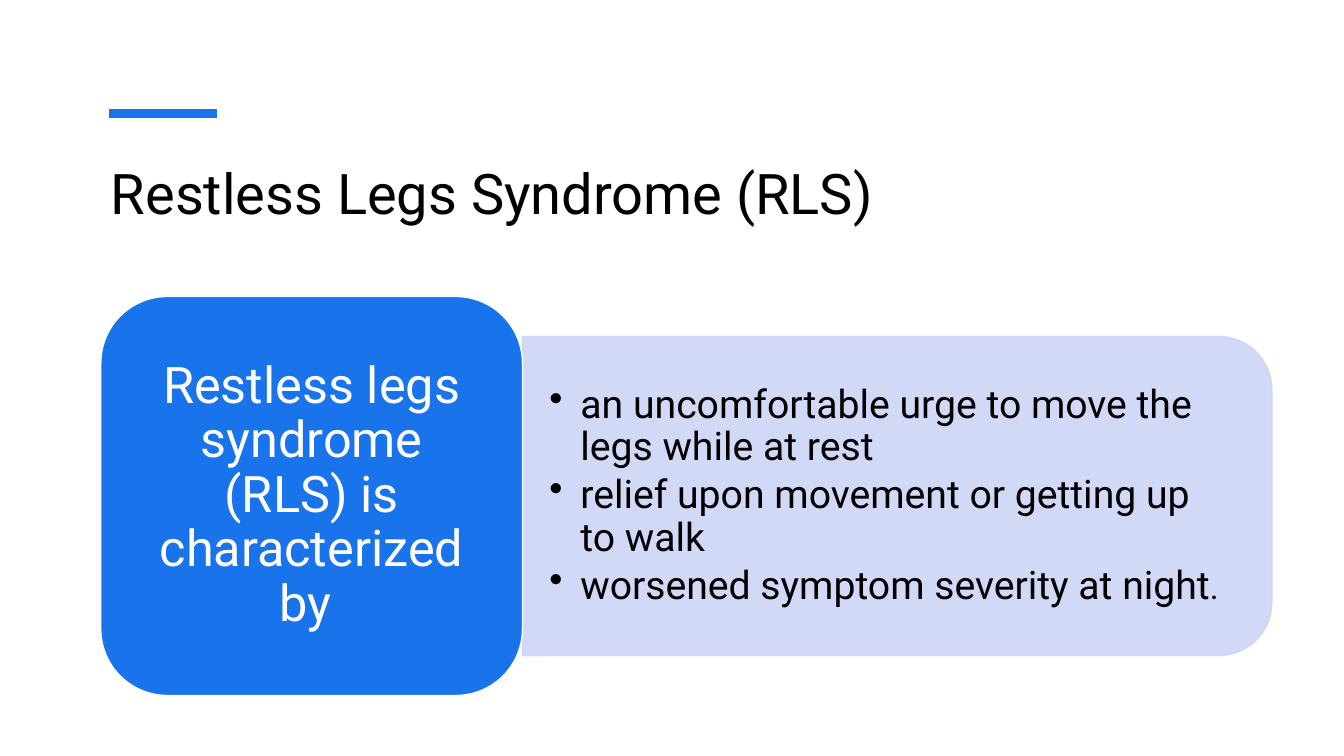
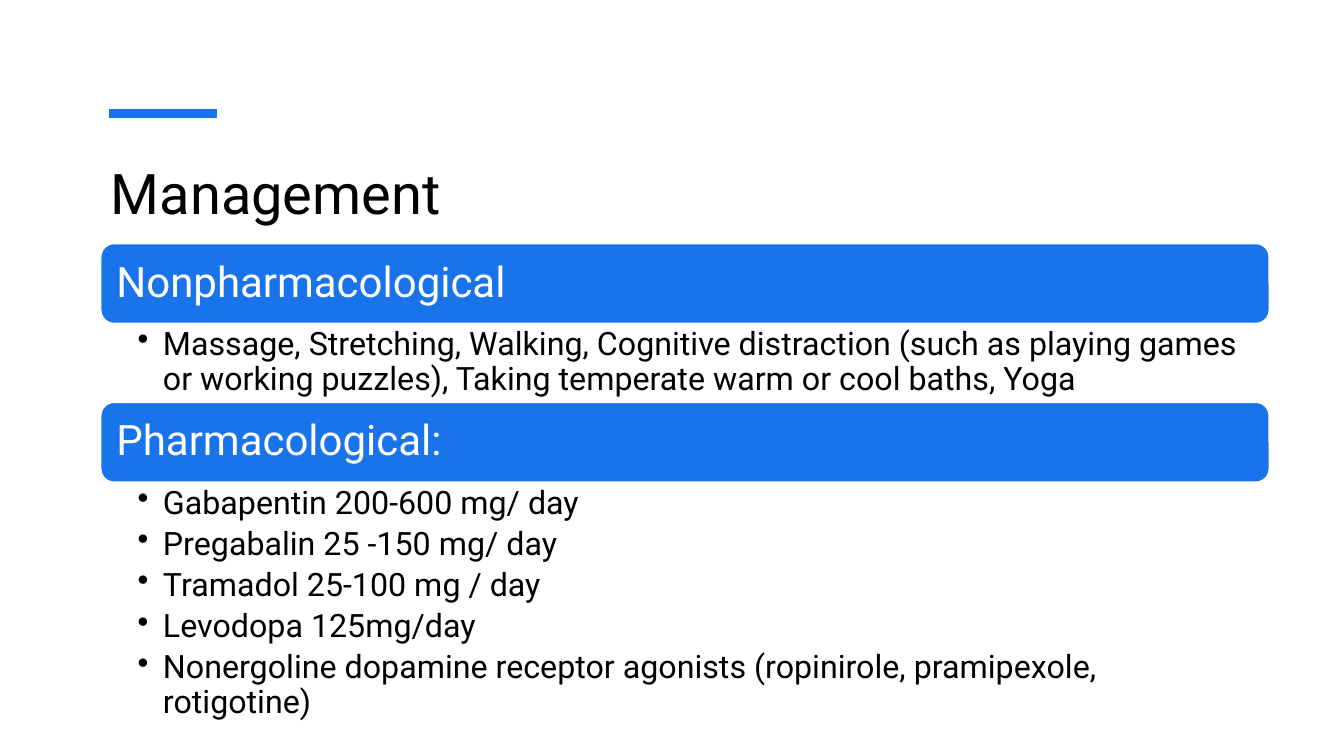
"""Build two slides on restless legs syndrome and its management."""
from dataclasses import dataclass

from lxml import etree
from pptx import Presentation
from pptx import util as u
from pptx.dml.color import RGBColor
from pptx.enum import shapes, text
from pptx.oxml.ns import qn

FONT = "Roboto"
BLUE, PALE, WHITE, BLACK = "1973EB", "CCD5F7", "FFFFFF", "000000"
COLS, ROWS = 160, 90
SLIDE_W, SLIDE_H = u.Inches(13.33), u.Inches(7.5)
LEFT = 12


@dataclass
class Box:
    """A rectangle in grid columns and rows."""
    x: float
    y: float
    w: float
    h: float


@dataclass
class Section:
    """A heading bar, its bullets and the rows they take."""
    heading: str
    bullets: list[str]
    rows: float


SECTIONS = [
    Section("Nonpharmacological", [
        "Massage, Stretching, Walking, Cognitive distraction (such as playing games "
        "or working puzzles), Taking temperate warm or cool baths, Yoga",
    ], 9.4),
    Section("Pharmacological:", [
        "Gabapentin 200-600 mg/ day",
        "Pregabalin 25 -150 mg/ day",
        "Tramadol 25-100 mg / day",
        "Levodopa 125mg/day",
        "Nonergoline dopamine receptor agonists (ropinirole, pramipexole, rotigotine)",
    ], 25.7),
]
SYMPTOMS = [
    "an uncomfortable urge to move the legs while at rest",
    "relief upon movement or getting up to walk",
    "worsened symptom severity at night",
]


def rgb(value: str) -> RGBColor:
    """Turn a hex string into a colour."""
    return RGBColor.from_string(value)


def col(n: float) -> int:
    """Give the length of n grid columns."""
    return round(SLIDE_W * n / COLS)


def row(n: float) -> int:
    """Give the length of n grid rows."""
    return round(SLIDE_H * n / ROWS)


def place(box: Box) -> tuple[int, int, int, int]:
    """Turn a grid box into left, top, width and height."""
    return col(box.x), row(box.y), col(box.w), row(box.h)


def add_run(p, content: str, size: float, color: str):
    """Add one formatted run to a paragraph."""
    r = p.add_run()
    r.text = content
    r.font.name, r.font.size = FONT, u.Pt(size)
    r.font.color.rgb = rgb(color)


def write(sp, lines: list[str], *, size: float, color: str = BLACK,
          insets: tuple[float, float, float, float], align=text.PP_ALIGN.LEFT,
          anchor=text.MSO_ANCHOR.MIDDLE, spacing: float = 0.9,
          after: float = 0, hang: float = 0):
    """Fill a shape with paragraphs, bulleted when hang is given."""
    tf = sp.text_frame
    tf.word_wrap, tf.auto_size = True, text.MSO_AUTO_SIZE.NONE
    tf.vertical_anchor = anchor
    tf.margin_left, tf.margin_right = col(insets[0]), col(insets[2])
    tf.margin_top, tf.margin_bottom = row(insets[1]), row(insets[3])
    for i, line in enumerate(lines):
        p = tf.add_paragraph() if i else tf.paragraphs[0]
        p.alignment, p.line_spacing = align, spacing
        p.space_before, p.space_after = u.Pt(0), u.Pt(round(size * after, 1))
        add_run(p, line, size, color)
        if hang:
            p.level = 1
            pPr = p._p.get_or_add_pPr()
            pPr.set("marL", str(col(hang)))
            pPr.set("indent", str(-col(hang)))
            etree.SubElement(pPr, qn("a:buChar")).set("char", "•")
    return tf


def add_shape(s, kind, box: Box, fill: str, line: str, opacity: int = 100):
    """Add a filled preset shape."""
    sp = s.shapes.add_shape(kind, *place(box))
    sp.shadow.inherit = False
    sp.fill.solid()
    sp.fill.fore_color.rgb = rgb(fill)
    sp.line.color.rgb = rgb(line)
    sp.line.width = u.Pt(1)
    if opacity < 100:
        for clr in sp._element.spPr.iter(qn("a:srgbClr")):
            etree.SubElement(clr, qn("a:alpha")).set("val", str(opacity * 1000))
    return sp


def add_textbox(s, box: Box):
    """Add an empty text box."""
    return s.shapes.add_textbox(*place(box))


def add_slide(prs, title: str):
    """Add a slide with the shared accent line and title."""
    s = prs.slides.add_slide(prs.slide_layouts[5])
    accent = s.shapes.add_connector(shapes.MSO_CONNECTOR.STRAIGHT,
                                    col(13), row(13.5), col(25.8), row(13.5))
    accent.line.color.rgb = rgb(BLUE)
    accent.line.width = u.Pt(6)
    etree.SubElement(accent._element.spPr, qn("a:effectLst"))
    sp = s.shapes.title
    sp.left, sp.top, sp.width, sp.height = place(Box(LEFT, 18, 136, 17.3))
    write(sp, [title], size=40, insets=(1.2, 0.9, 1.2, 0.6),
          anchor=text.MSO_ANCHOR.TOP, spacing=1)
    return s


def build_overview(prs):
    """Build the slide that lists the symptoms."""
    s = add_slide(prs, "Restless Legs Syndrome (RLS)")
    card = Box(LEFT, 35.3, 50.2, 47.5)
    panel = Box(card.x + card.w, card.y + card.h * 0.1, 89.2, card.h * 0.8)
    upright = Box(panel.x + (panel.w - panel.h) / 2,
                  panel.y + (panel.h - panel.w) / 2, panel.h, panel.w)
    sp = add_shape(s, shapes.MSO_SHAPE.ROUND_2_SAME_RECTANGLE, upright, PALE, PALE, 90)
    sp.rotation = 90
    tf = write(add_textbox(s, panel), SYMPTOMS, size=28, after=0.15, hang=3.7,
               insets=(3.2, 1.7, 5, 1.7))
    add_run(tf.paragraphs[-1], ".", 24, BLACK)
    sp = add_shape(s, shapes.MSO_SHAPE.ROUNDED_RECTANGLE, card, BLUE, WHITE)
    write(sp, ["Restless legs syndrome (RLS) is characterized by "], size=36,
          color=WHITE, after=0.35, align=text.PP_ALIGN.CENTER,
          insets=(1.8, 0.9, 1.8, 0.9))


def build_management(prs):
    """Build the slide that stacks the treatment sections."""
    s = add_slide(prs, "Management")
    width, bar_rows, y = 139.1, 9.5, 29
    for section in SECTIONS:
        bar = Box(LEFT, y, width, bar_rows)
        sp = add_shape(s, shapes.MSO_SHAPE.ROUNDED_RECTANGLE, bar, BLUE, WHITE)
        write(sp, [section.heading], size=30, color=WHITE, after=0.35,
              insets=(1.4, 1.4, 1.4, 1.4))
        body = Box(LEFT, y + bar_rows, width, section.rows)
        write(add_textbox(s, body), section.bullets, size=23, after=0.2, hang=3,
              anchor=text.MSO_ANCHOR.TOP, insets=(4.4, 0.5, 2.8, 0.5))
        y += bar_rows + section.rows


def main():
    """Build and save the presentation."""
    prs = Presentation()
    prs.slide_width, prs.slide_height = SLIDE_W, SLIDE_H
    build_overview(prs)
    build_management(prs)
    prs.save("out.pptx")


if __name__ == "__main__":
    main()
